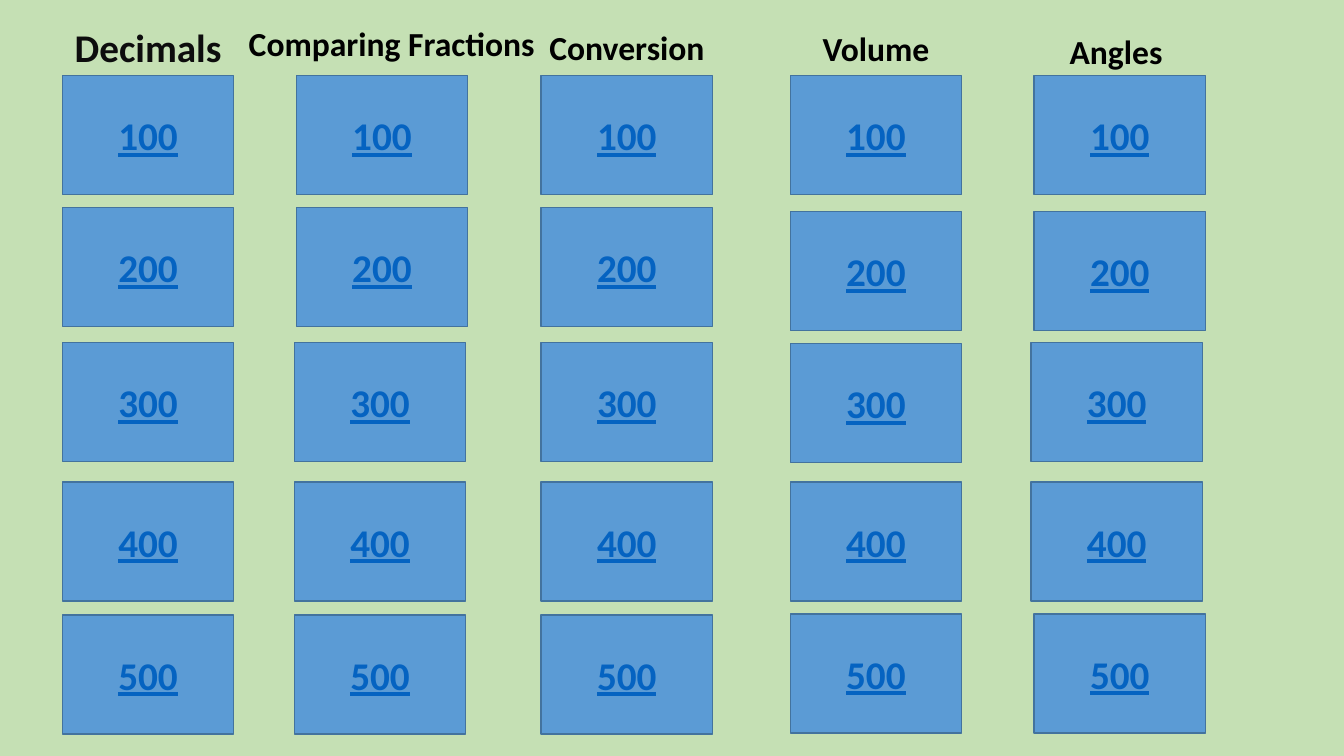
from dataclasses import dataclass
from pptx import Presentation
from pptx.dml.color import RGBColor
from pptx.enum.shapes import MSO_SHAPE
from pptx.enum.text import MSO_ANCHOR, PP_ALIGN
from pptx.util import Pt


@dataclass(frozen=True)
class Theme:
    font: str = "Calibri"
    board: str = "C5E0B4"
    tile: str = "5B9BD5"
    tile_edge: str = "43739E"
    points: str = "0563C1"
    lead_heading: str = "0D0D0D"
    heading: str = "000000"
    large: int = 28
    medium: int = 24
    edge: int = 1


THEME = Theme()
SLIDE_WIDTH, SLIDE_HEIGHT = 960, 540
TILE_WIDTH, TILE_HEIGHT = 122.4, 85
COLUMN_LEFTS = (44.6, 211.7, 386.6, 564.5, 738.7)
ROW_TOPS = (54, 148.3, 244.8, 344.2, 439.2)
TILE_NUDGES = {
    (1, 2): (-1.4, 0), (1, 3): (-1.4, 0), (1, 4): (-1.4, 0),
    (3, 1): (0, 2.9), (3, 2): (0, 0.7), (3, 4): (0, -0.7),
    (4, 1): (0, 2.9), (4, 2): (-2.2, 0), (4, 3): (-2.2, 0), (4, 4): (0, -0.7),
}
HEADINGS = (
    ("Decimals", (44.6, 13, 122.4, 41), THEME.large, THEME.lead_heading, PP_ALIGN.CENTER),
    ("Comparing Fractions", (170.6, 13, 219.6, 36), THEME.medium, THEME.heading, PP_ALIGN.LEFT),
    ("Conversion", (381.6, 15.8, 132.5, 36), THEME.medium, THEME.heading, PP_ALIGN.CENTER),
    ("Volume", (554.4, 16.6, 142.6, 36), THEME.medium, THEME.heading, PP_ALIGN.CENTER),
    ("Angles ", (734.4, 18.7, 131, 36), THEME.medium, THEME.heading, PP_ALIGN.CENTER),
)


def write_label(frame, label, size, color, align, underline=False):
    frame.text = label
    frame.word_wrap = True
    paragraph = frame.paragraphs[0]
    paragraph.alignment = align
    font = paragraph.runs[0].font
    font.name = THEME.font
    font.size = Pt(size)
    font.bold = True
    font.underline = underline
    font.color.rgb = RGBColor.from_string(color)


def add_panel(slide, box, fill, edge):
    panel = slide.shapes.add_shape(MSO_SHAPE.RECTANGLE, *map(Pt, box))
    panel.shadow.inherit = False
    panel.fill.solid()
    panel.fill.fore_color.rgb = RGBColor.from_string(fill)
    panel.line.color.rgb = RGBColor.from_string(edge)
    panel.line.width = Pt(THEME.edge)
    return panel


def add_tile(slide, column, row):
    dx, dy = TILE_NUDGES.get((column, row), (0, 0))
    box = (COLUMN_LEFTS[column] + dx, ROW_TOPS[row] + dy, TILE_WIDTH, TILE_HEIGHT)
    frame = add_panel(slide, box, THEME.tile, THEME.tile_edge).text_frame
    frame.vertical_anchor = MSO_ANCHOR.MIDDLE
    write_label(frame, str(100 * (row + 1)), THEME.large, THEME.points,
                PP_ALIGN.CENTER, underline=True)


def add_heading(slide, label, box, size, color, align):
    heading = slide.shapes.add_textbox(*map(Pt, box))
    write_label(heading.text_frame, label, size, color, align)


def main():
    deck = Presentation()
    deck.slide_width, deck.slide_height = Pt(SLIDE_WIDTH), Pt(SLIDE_HEIGHT)
    slide = deck.slides.add_slide(deck.slide_layouts.get_by_name("Blank"))
    add_panel(slide, (0, 0, SLIDE_WIDTH, SLIDE_HEIGHT), THEME.board, THEME.board)
    for column in range(len(COLUMN_LEFTS)):
        for row in range(len(ROW_TOPS)):
            add_tile(slide, column, row)
    for heading in HEADINGS:
        add_heading(slide, *heading)
    deck.save("out.pptx")


if __name__ == "__main__":
    main()
